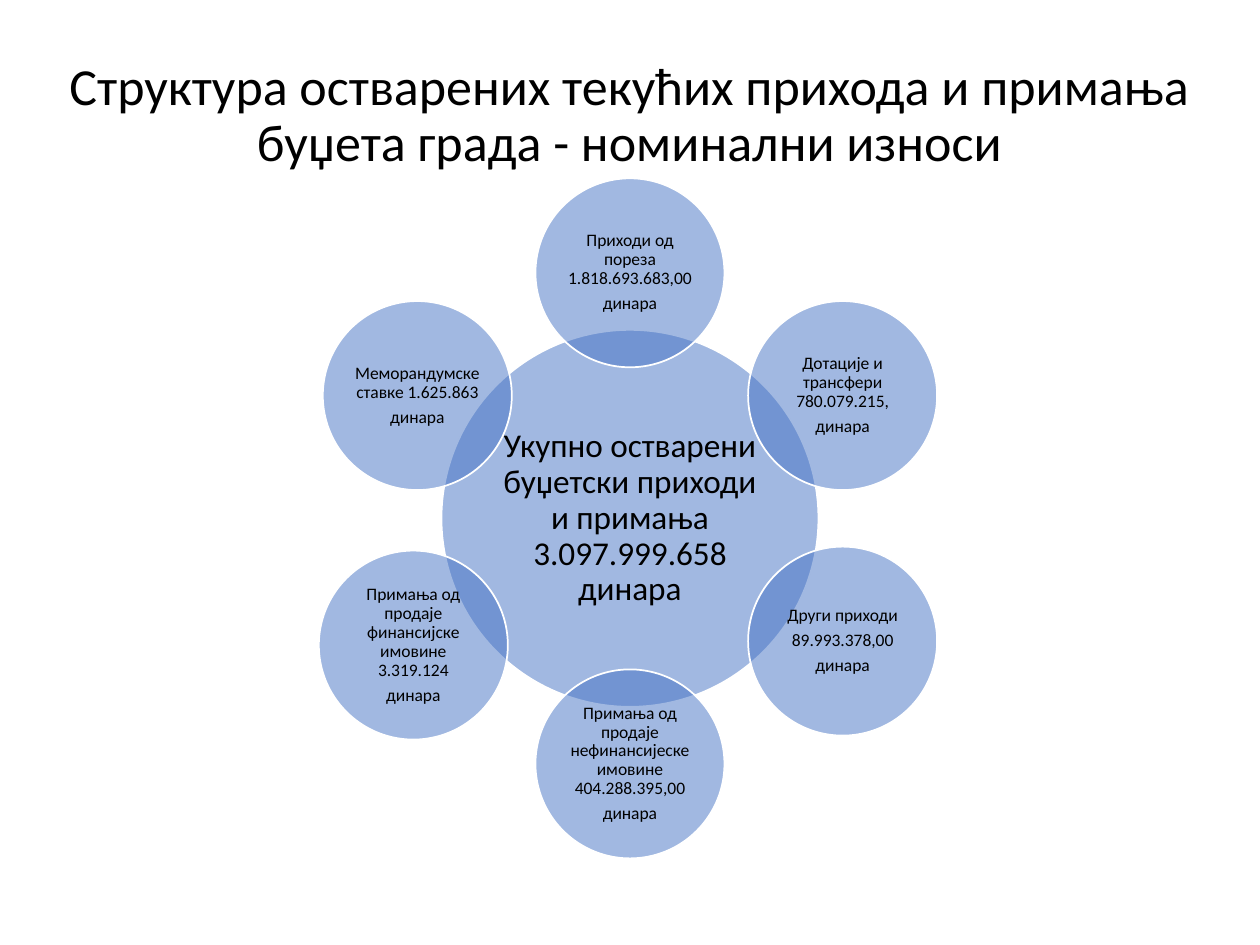
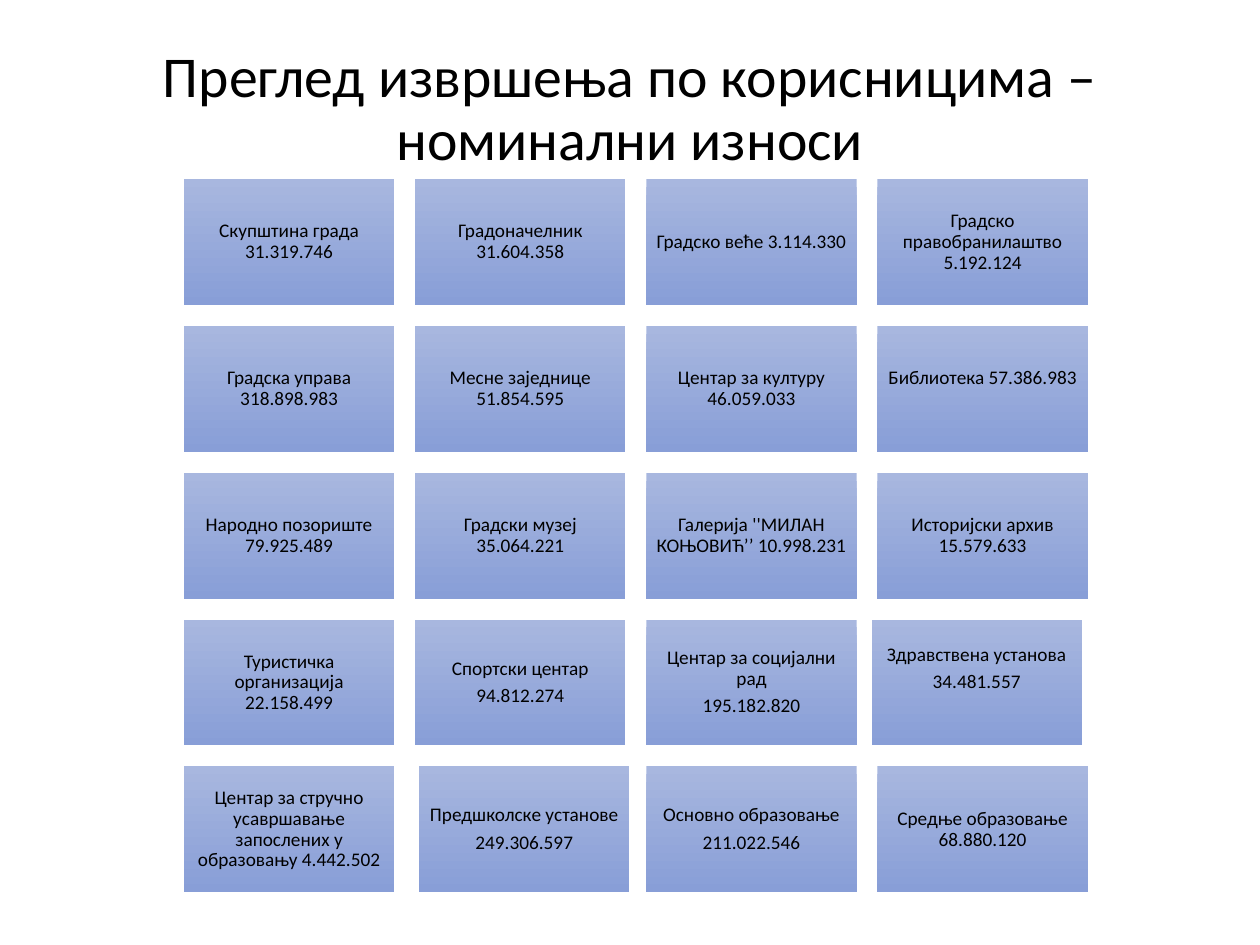
from dataclasses import dataclass
from math import cos, radians, sin

from lxml import etree
from pptx import Presentation
from pptx.dml.color import RGBColor
from pptx.enum.shapes import MSO_SHAPE
from pptx.enum.text import MSO_ANCHOR, MSO_AUTO_SIZE, PP_ALIGN
from pptx.oxml.ns import qn
from pptx.util import Cm, Pt

ELLIPSE, RECTANGLE = MSO_SHAPE.OVAL, MSO_SHAPE.RECTANGLE
MIDDLE, BOTTOM = MSO_ANCHOR.MIDDLE, MSO_ANCHOR.BOTTOM
CENTER = PP_ALIGN.CENTER
NO_AUTOFIT = MSO_AUTO_SIZE.NONE

# Content: each entry lists its paragraphs
REVENUE_TITLE = "Структура остварених текућих прихода и примања буџета града - номинални износи"
TOTAL = ["Укупно остварени буџетски приходи и примања 3.097.999.658 динара"]
REVENUES = [  # clockwise from the top
    ["Приходи од пореза 1.818.693.683,00", "динара"],
    ["Дотације и трансфери 780.079.215,", "динара"],
    ["Други приходи", "89.993.378,00", "динара"],
    ["Примања од продаје нефинансијеске имовине 404.288.395,00", "динара"],
    ["Примања од продаје финансијске имовине 3.319.124", "динара"],
    ["Меморандумске ставке 1.625.863", "динара"],
]
REVENUE_NUDGES = {4: (-0.08, 0.08)}  # index: shift right and down, cm

USERS_TITLE = "Преглед извршења по корисницима – номинални износи"
USERS = [
    ["Скупштина града 31.319.746"],
    ["Градоначелник 31.604.358"],
    ["Градско веће 3.114.330"],
    ["Градско правобранилаштво 5.192.124"],
    ["Градска управа 318.898.983"],
    ["Месне заједнице 51.854.595"],
    ["Центар за културу 46.059.033"],
    ["Библиотека 57.386.983"],
    ["Народно позориште 79.925.489"],
    ["Градски музеј 35.064.221"],
    ["Галерија ''МИЛАН КОЊОВИЋ’’ 10.998.231"],
    ["Историјски архив 15.579.633"],
    ["Туристичка организација 22.158.499"],
    ["Спортски центар", "94.812.274"],
    ["Центар за социјални рад", "195.182.820"],
    ["Здравствена установа", "34.481.557"],
    ["Центар за стручно усавршавање запослених у образовању 4.442.502"],
    ["Предшколске установе", "249.306.597"],
    ["Основно образовање", "211.022.546"],
    ["Средње образовање 68.880.120"],
]
USER_NUDGES = {15: -0.12, 17: 0.08}  # index: shift right, cm
USER_LIFTS = {7: 0.42, 15: 0.56}  # index: extra bottom inset, cm


@dataclass(frozen=True)
class Theme:
    font: str = "Calibri"
    ink: RGBColor = RGBColor(0x00, 0x00, 0x00)
    outline: RGBColor = RGBColor(0xFF, 0xFF, 0xFF)
    circle: RGBColor = RGBColor(0x44, 0x72, 0xC4)
    tile_top: RGBColor = RGBColor(0xA8, 0xB7, 0xDF)
    tile_bottom: RGBColor = RGBColor(0x88, 0x9E, 0xD7)
    circle_opacity: int = 50
    revenue_title: float = 29.7
    users_title: float = 33
    total: float = 19
    revenue: float = 10
    user: float = 11


THEME = Theme()

# Layout, cm
TITLE_BOX = (0.76, 0.64, 23.88, 2.97)
HUB_CENTER, HUB_SIZE = (12.7, 10.45), 7.6
ORBIT, SATELLITE_SIZE = 4.95, 3.81
GRID_LEFT, GRID_TOP, GRID_COLUMNS = 3.71, 3.61, 4
TILE_WIDTH, TILE_HEIGHT, TILE_GAP = 4.24, 2.54, 0.42


# Shared text and shape helpers
def write(frame, paragraphs, size, anchor, space_after=0.0):
    frame.text = "\n".join(paragraphs)
    frame.word_wrap = True
    frame.auto_size = NO_AUTOFIT
    frame.vertical_anchor = anchor
    for paragraph in frame.paragraphs:
        paragraph.alignment = CENTER
        paragraph.line_spacing = 0.9
        paragraph.space_before = Pt(0)
        paragraph.space_after = Pt(space_after)
        for run in paragraph.runs:
            run.font.name = THEME.font
            run.font.size = Pt(size)
            run.font.color.rgb = THEME.ink


def add_titled_slide(deck, heading, size):
    slide = deck.slides.add_slide(deck.slide_layouts[5])
    title = slide.shapes.title
    title.left, title.top, title.width, title.height = map(Cm, TITLE_BOX)
    write(title.text_frame, [heading], size, BOTTOM)
    return slide


def add_label(slide, kind, box, paragraphs, size, inset, lift=0.0):
    label = slide.shapes.add_shape(kind, *map(Cm, box))
    label.shadow.inherit = False
    frame = label.text_frame
    frame.margin_left = frame.margin_right = frame.margin_top = Cm(inset)
    frame.margin_bottom = Cm(inset + lift)
    write(frame, paragraphs, size, MIDDLE, 0.35 * size)
    return label


def add_circle(slide, center, diameter, paragraphs, size, inset):
    x, y = center
    box = (x - diameter / 2, y - diameter / 2, diameter, diameter)
    circle = add_label(slide, ELLIPSE, box, paragraphs, size, inset)
    circle.fill.solid()
    circle.fill.fore_color.rgb = THEME.circle
    color = circle.element.spPr.find(qn("a:solidFill"))[0]
    etree.SubElement(color, qn("a:alpha"), val=str(THEME.circle_opacity * 1000))
    circle.line.color.rgb = THEME.outline
    circle.line.width = Pt(1)


def add_tile(slide, left, top, paragraphs, lift):
    box = (left, top, TILE_WIDTH, TILE_HEIGHT)
    tile = add_label(slide, RECTANGLE, box, paragraphs, THEME.user, 0.12, lift)
    tile.fill.gradient()
    tile.fill.gradient_angle = 270
    for stop, color in zip(tile.fill.gradient_stops, (THEME.tile_top, THEME.tile_bottom)):
        stop.color.rgb = color
    tile.line.fill.background()


# Slides
def build_revenues(deck):
    slide = add_titled_slide(deck, REVENUE_TITLE, THEME.revenue_title)
    add_circle(slide, HUB_CENTER, HUB_SIZE, TOTAL, THEME.total, 0.08)
    hub_x, hub_y = HUB_CENTER
    for index, revenue in enumerate(REVENUES):
        angle = radians(360 / len(REVENUES) * index)
        right, down = REVENUE_NUDGES.get(index, (0, 0))
        center = (hub_x + ORBIT * sin(angle) + right, hub_y - ORBIT * cos(angle) + down)
        add_circle(slide, center, SATELLITE_SIZE, revenue, THEME.revenue, 0.03)


def build_users(deck):
    slide = add_titled_slide(deck, USERS_TITLE, THEME.users_title)
    for index, user in enumerate(USERS):
        row, column = divmod(index, GRID_COLUMNS)
        left = GRID_LEFT + column * (TILE_WIDTH + TILE_GAP) + USER_NUDGES.get(index, 0)
        top = GRID_TOP + row * (TILE_HEIGHT + TILE_GAP)
        add_tile(slide, left, top, user, USER_LIFTS.get(index, 0))


def main():
    deck = Presentation()
    deck.slide_width, deck.slide_height = Cm(25.4), Cm(19.05)
    build_revenues(deck)
    build_users(deck)
    deck.save("out.pptx")


if __name__ == "__main__":
    main()
